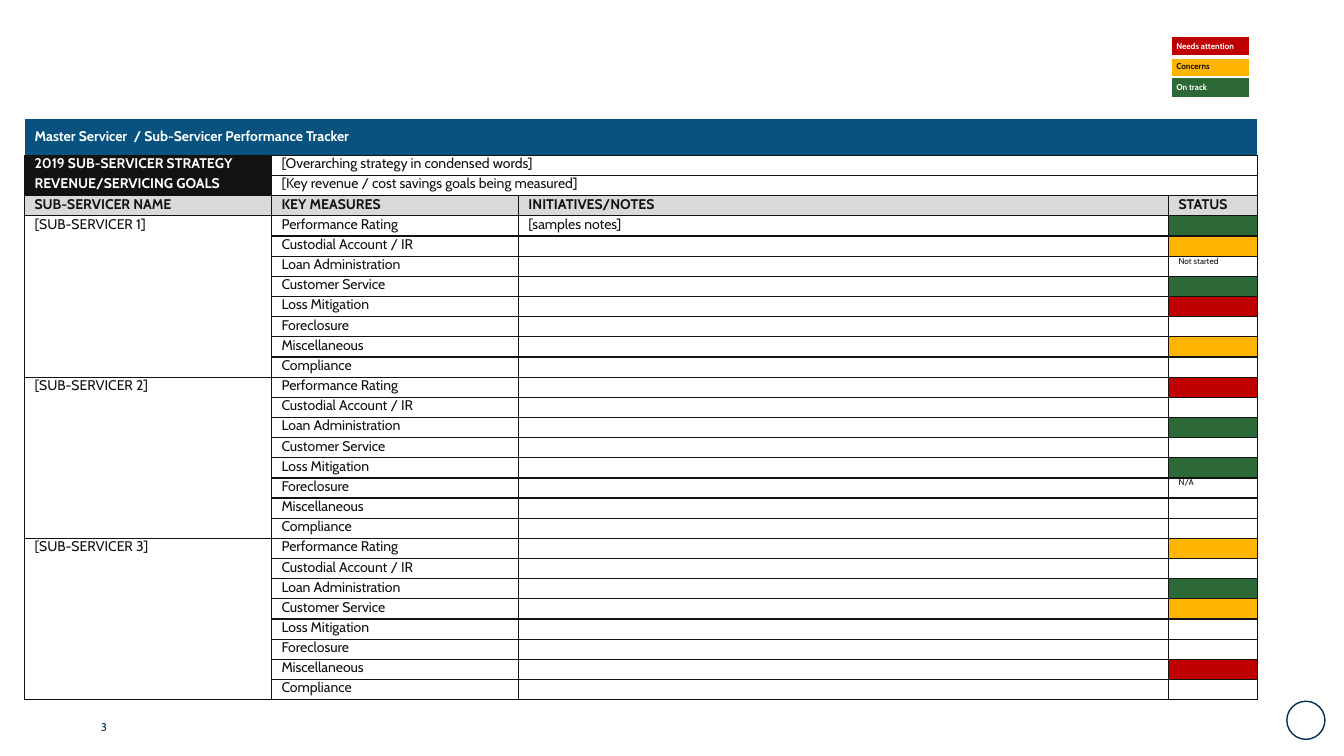
from dataclasses import dataclass

import pptx
import pptx.dml.color
import pptx.enum.shapes
import pptx.enum.text
import pptx.oxml.ns
import pptx.util
from lxml import etree

Pt = pptx.util.Pt


@dataclass(frozen=True)
class Theme:
    font: str = "Cabin"
    ink: str = "121212"
    white: str = "FFFFFF"
    navy: str = "05304D"
    blue: str = "085280"
    grey: str = "D9D9D9"
    red: str = "C00000"
    amber: str = "FFB400"
    green: str = "2C6937"
    body: float = 10
    page: float = 8
    small: float = 6


T = Theme()

MEASURES = ["Performance Rating", "Custodial Account / IR", "Loan Administration",
            "Customer Service", "Loss Mitigation", "Foreclosure", "Miscellaneous",
            "Compliance"]

# One status per measure: a fill colour, a short text, or nothing
STATUSES = {
    "[SUB-SERVICER 1]": [T.green, T.amber, "Not started", T.green, T.red, "", T.amber, ""],
    "[SUB-SERVICER 2]": [T.red, "", T.green, "", T.green, "N/A", "", ""],
    "[SUB-SERVICER 3]": [T.amber, "", T.green, T.amber, "", "", T.red, ""],
}
LEGEND = [("Needs attention", T.red, T.white), ("Concerns", T.amber, T.ink),
          ("On track", T.green, T.white)]


def rgb(color):
    return pptx.dml.color.RGBColor.from_string(color)


def format_text(p, size, color, bold=False):
    for r in p.runs:
        r.font.name = T.font
        r.font.size = Pt(size)
        r.font.bold = bold
        r.font.color.rgb = rgb(color)


def set_border(cell, side, color, width=1):
    qn = pptx.oxml.ns.qn
    ln = etree.SubElement(cell._tc.get_or_add_tcPr(), qn(f"a:ln{side}"), w=str(Pt(width)))
    fill = etree.SubElement(ln, qn("a:solidFill"))
    etree.SubElement(fill, qn("a:srgbClr"), val=color)


def fill_cell(cell, text="", fill=None, color=T.ink, bold=False, size=T.body,
              margins=(7.2, 0), borders=(T.ink,) * 4, bottom_width=1):
    cell.margin_left = cell.margin_right = Pt(margins[0])
    cell.margin_top = cell.margin_bottom = Pt(margins[1])
    for side, line in zip("LRTB", borders):
        set_border(cell, side, line, bottom_width if side == "B" else 1)
    if fill:
        cell.fill.solid()
        cell.fill.fore_color.rgb = rgb(fill)
    else:
        cell.fill.background()
    p = cell.text_frame.paragraphs[0]
    if text:
        p.text = text
        format_text(p, size, color, bold)
    else:
        # An empty cell keeps a small line height
        etree.SubElement(p._p, pptx.oxml.ns.qn("a:endParaRPr"), sz=str(size * 100))


def add_grid(s, left, top, widths, heights):
    shape = s.shapes.add_table(len(heights), len(widths), Pt(left), Pt(top),
                               Pt(sum(widths)), Pt(sum(heights)))
    table = shape.table
    table.first_row = table.horz_banding = False
    for column, width in zip(table.columns, widths):
        column.width = Pt(width)
    for row, height in zip(table.rows, heights):
        row.height = Pt(height)
    return table


def add_tracker(s):
    count = len(MEASURES)
    table = add_grid(s, 17.5, 84.4, [176.4, 176.4, 464.4, 63.4],
                     [26.6] + [14.4] * (3 + count * len(STATUSES)))

    # Title bar
    for col in range(4):
        fill_cell(table.cell(0, col),
                  "" if col else "Master Servicer  / Sub-Servicer Performance Tracker",
                  T.blue, T.white, True, margins=(7.2, 7.2),
                  borders=(T.white, T.white, T.white, T.ink))
    table.cell(0, 0).merge(table.cell(0, 3))

    # Strategy and goals
    goals = [("2019 SUB-SERVICER STRATEGY", "[Overarching strategy in condensed words]"),
             ("REVENUE/SERVICING GOALS", "[Key revenue / cost savings goals being measured]")]
    for row, (label, goal) in enumerate(goals, 1):
        fill_cell(table.cell(row, 0), label, T.ink, T.white, True)
        for col, text in enumerate((goal, "", ""), 1):
            fill_cell(table.cell(row, col), text)
        table.cell(row, 1).merge(table.cell(row, 3))

    # Column headings
    headings = ["SUB-SERVICER NAME", "KEY MEASURES", "INITIATIVES/NOTES", "STATUS"]
    for col, heading in enumerate(headings):
        fill_cell(table.cell(3, col), heading, T.grey, bold=True)

    # One block of measures per sub-servicer
    for block, (name, statuses) in enumerate(STATUSES.items()):
        first = 4 + block * count
        for i, (measure, status) in enumerate(zip(MEASURES, statuses)):
            row = first + i
            fill_cell(table.cell(row, 0), "" if i else name)
            fill_cell(table.cell(row, 1), measure)
            fill_cell(table.cell(row, 2), "[samples notes]" if row == 4 else "")
            if status in (T.red, T.amber, T.green):
                fill_cell(table.cell(row, 3), fill=status)
            else:
                fill_cell(table.cell(row, 3), status, size=T.small)
        table.cell(first, 0).merge(table.cell(first + count - 1, 0))


def add_legend(s):
    table = add_grid(s, 836.6, 26.2, [55.8], [14.4] * len(LEGEND))
    for row, (text, fill, color) in enumerate(LEGEND):
        fill_cell(table.cell(row, 0), text, fill, color, True, T.small, (3.6, 3.6),
                  (T.white,) * 4, 1 if row else 3)


def add_page_number(s, number):
    tf = s.shapes.add_textbox(Pt(72), Pt(514.8), Pt(24.5), Pt(9.4)).text_frame
    tf.margin_left = tf.margin_right = tf.margin_top = tf.margin_bottom = 0
    tf.word_wrap = True
    tf.vertical_anchor = pptx.enum.text.MSO_ANCHOR.MIDDLE
    tf.text = number
    format_text(tf.paragraphs[0], T.page, T.navy)


def add_emblem(s):
    sp = s.shapes.add_shape(pptx.enum.shapes.MSO_SHAPE.OVAL,
                            Pt(919.2), Pt(500.9), Pt(27.2), Pt(27.2))
    sp.shadow.inherit = False
    sp.fill.background()
    sp.line.color.rgb = rgb(T.navy)
    sp.line.width = Pt(1)


def main():
    prs = pptx.Presentation()
    prs.slide_width, prs.slide_height = Pt(960), Pt(540)
    s = prs.slides.add_slide(prs.slide_layouts[6])
    add_emblem(s)
    add_page_number(s, "3")
    add_tracker(s)
    add_legend(s)
    prs.save("out.pptx")


if __name__ == "__main__":
    main()
